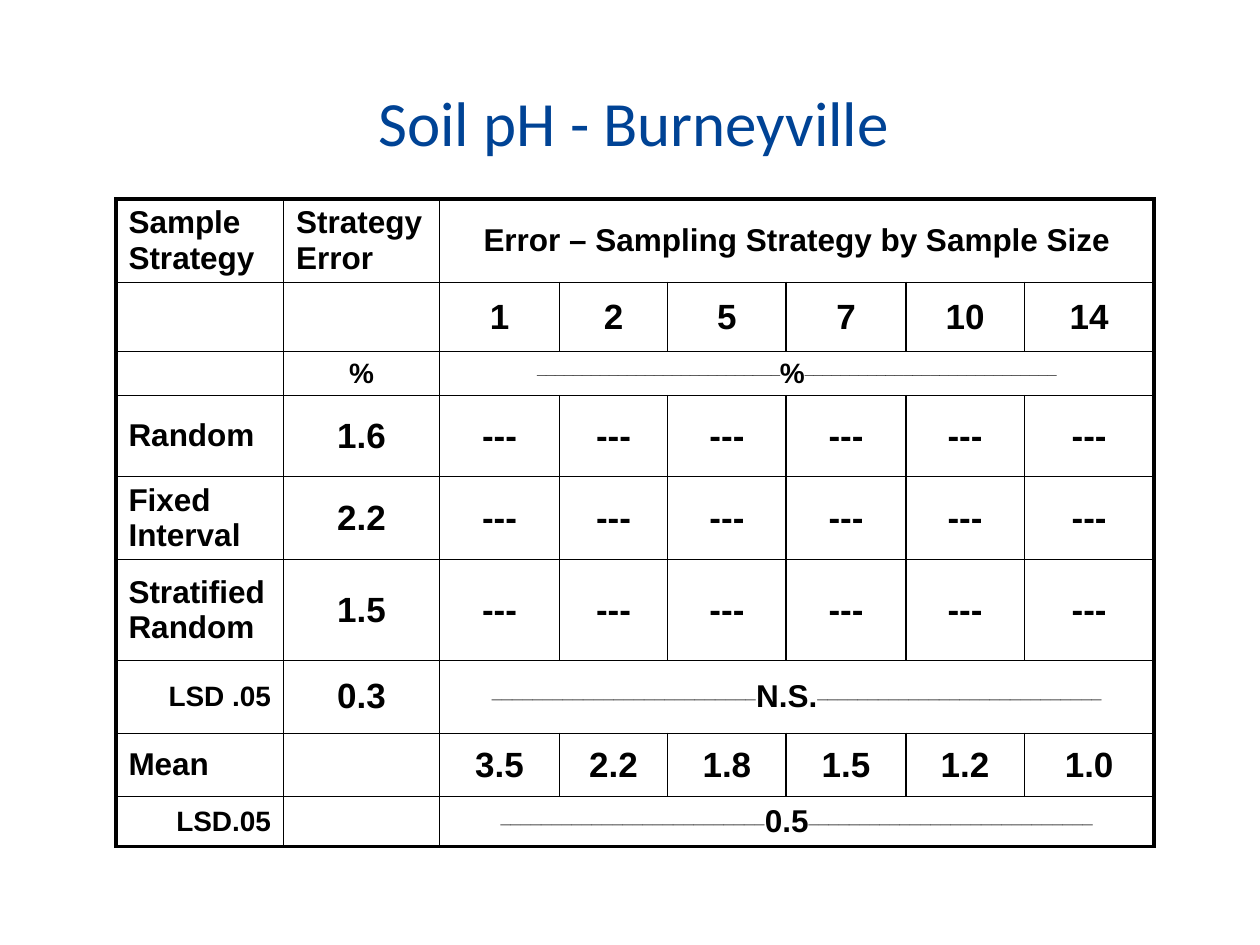
"""Build the soil pH slide with its sampling error table."""
import lxml.etree
import pptx
import pptx.dml.color
import pptx.enum.text
import pptx.oxml.ns
import pptx.util

Inches = pptx.util.Inches
Pt = pptx.util.Pt
ALIGN = pptx.enum.text.PP_ALIGN
ANCHOR = pptx.enum.text.MSO_ANCHOR
qn = pptx.oxml.ns.qn

TITLE = "Soil pH - Burneyville"
TITLE_BOX = (0.75, 0.42, 8.5, 1.08)
TABLE_ORIGIN = (0.92, 1.58)
COLUMN_WIDTHS = [1.33, 1.24, 0.95, 0.86, 0.94, 0.95, 0.94, 1.03]
FIRST_VALUE_COLUMN = 2

NO_VALUES = ["---"] * 6
ROWS = [
    {"height": 0.64, "kind": "header", "label": "Sample Strategy", "error": "Strategy Error",
     "span": (0, "Error – Sampling Strategy by Sample Size", 0)},
    {"height": 0.55, "kind": "data", "values": ["1", "2", "5", "7", "10", "14"]},
    {"height": 0.35, "kind": "unit", "error": "%", "span": (27, "%", 28)},
    {"height": 0.64, "kind": "data", "label": "Random", "error": "1.6", "values": NO_VALUES},
    {"height": 0.64, "kind": "data", "label": "Fixed Interval", "error": "2.2", "values": NO_VALUES},
    {"height": 0.8, "kind": "data", "label": "Stratified Random", "error": "1.5", "values": NO_VALUES},
    {"height": 0.58, "kind": "lsd", "label": "LSD .05", "error": "0.3", "span": (26, "N.S.", 28)},
    {"height": 0.5, "kind": "data", "label": "Mean",
     "values": ["3.5", "2.2", "1.8", "1.5", "1.2", "1.0"]},
    {"height": 0.4, "kind": "lsd", "label": "LSD.05", "span": (26, "0.5", 28)},
]

THEME = {
    "title": {"name": "Calibri", "size": Pt(36), "color": "004395"},
    "large": {"name": "Arial", "size": Pt(20), "bold": True, "color": "000000"},
    "medium": {"name": "Arial", "size": Pt(18), "bold": True, "color": "000000"},
    "small": {"name": "Arial", "size": Pt(16), "bold": True, "color": "000000"},
    "border": {"color": "000000", "inner": Pt(1), "outer": Pt(2.25)},
}
KINDS = {
    "header": {"label": ("medium", ALIGN.LEFT), "error": ("medium", ALIGN.LEFT), "span": "medium"},
    "unit": {"label": ("small", ALIGN.LEFT), "error": ("small", ALIGN.CENTER), "span": "small"},
    "data": {"label": ("medium", ALIGN.LEFT), "error": ("large", ALIGN.CENTER)},
    "lsd": {"label": ("small", ALIGN.RIGHT), "error": ("large", ALIGN.CENTER), "span": "medium"},
}
CELL_FORMATS = {
    ANCHOR.TOP: {"margin_top": Inches(0.05), "margin_bottom": Inches(0.01)},
    ANCHOR.MIDDLE: {"margin_top": Inches(0.03), "margin_bottom": Inches(0.03)},
}


def add_run(paragraph, text, style, raised=False):
    """Add one run in a theme style."""
    run = paragraph.add_run()
    run.text = text
    for name, value in THEME[style].items():
        if name == "color":
            run.font.color.rgb = pptx.dml.color.RGBColor.from_string(value)
        else:
            setattr(run.font, name, value)
    if raised:
        run.font._element.set("baseline", "30000")


def write_cell(cell, pieces, style, alignment, anchor=ANCHOR.MIDDLE):
    """Write (text, raised) pieces, or size the empty cell."""
    for name, value in {"vertical_anchor": anchor, **CELL_FORMATS[anchor]}.items():
        setattr(cell, name, value)
    paragraph = cell.text_frame.paragraphs[0]
    paragraph.alignment = alignment
    pieces = [piece for piece in pieces if piece[0]]
    for text, raised in pieces:
        add_run(paragraph, text, style, raised)
    if not pieces:
        size = str(int(THEME["small"]["size"].pt * 100))
        lxml.etree.SubElement(paragraph._p, qn("a:endParaRPr"), sz=size)


def draw_borders(cell, outer_edges, hidden_edges):
    """Draw cell edges, heavier on the table outline."""
    border = THEME["border"]
    properties = cell._tc.get_or_add_tcPr()
    for edge in "LRTB":
        if edge in hidden_edges:
            continue
        width = border["outer" if edge in outer_edges else "inner"]
        line = lxml.etree.SubElement(properties, qn(f"a:ln{edge}"), w=str(int(width)))
        fill = lxml.etree.SubElement(line, qn("a:solidFill"))
        lxml.etree.SubElement(fill, qn("a:srgbClr"), val=border["color"])
    cell.fill.background()


def add_title(slide):
    """Add the centred title."""
    shape = slide.shapes.add_textbox(*map(Inches, TITLE_BOX))
    frame = shape.text_frame
    for name, value in {"word_wrap": True, "vertical_anchor": ANCHOR.MIDDLE}.items():
        setattr(frame, name, value)
    paragraph = frame.paragraphs[0]
    paragraph.alignment = ALIGN.CENTER
    paragraph._p.get_or_add_pPr().set("marL", str(Inches(0.06)))
    add_run(paragraph, TITLE, "title")


def fill_row(table, row_index, row):
    """Write the texts and borders of one table row."""
    kind = KINDS[row["kind"]]
    anchor = ANCHOR.TOP if row["kind"] in ("header", "unit") else ANCHOR.MIDDLE
    for column, part in enumerate(("label", "error")):
        write_cell(table.cell(row_index, column), [(row.get(part, ""), False)], *kind[part], anchor)

    last = len(COLUMN_WIDTHS) - 1
    first_value = table.cell(row_index, FIRST_VALUE_COLUMN)
    if "span" in row:
        first_value.merge(table.cell(row_index, last))
        before, text, after = row["span"]
        pieces = [("_" * before, True), (text, False), ("_" * after, True)]
        span_anchor = ANCHOR.TOP if row["kind"] == "unit" else ANCHOR.MIDDLE
        write_cell(first_value, pieces, kind["span"], ALIGN.CENTER, span_anchor)
        for column in range(FIRST_VALUE_COLUMN + 1, last + 1):
            write_cell(table.cell(row_index, column), [], kind["span"], ALIGN.CENTER)
    for column, text in enumerate(row.get("values", []), FIRST_VALUE_COLUMN):
        write_cell(table.cell(row_index, column), [(text, False)], "large", ALIGN.CENTER)

    for column in range(last + 1):
        cell = table.cell(row_index, column)
        tests = {
            "L": column == 0,
            "R": column == last or cell.is_merge_origin,
            "T": row_index == 0,
            "B": row_index == len(ROWS) - 1,
        }
        outer_edges = [edge for edge, outer in tests.items() if outer]
        hidden_edges = ""
        if cell.is_spanned:
            hidden_edges = "L" if column == last else "LR"
        draw_borders(cell, outer_edges, hidden_edges)


def add_error_table(slide):
    """Add the error table."""
    heights = [row["height"] for row in ROWS]
    size = (sum(COLUMN_WIDTHS), sum(heights))
    frame = slide.shapes.add_table(
        len(ROWS), len(COLUMN_WIDTHS), *map(Inches, TABLE_ORIGIN + size)
    )
    table = frame.table
    for name in ("first_row", "horz_banding"):
        setattr(table, name, False)
    for column, width in zip(table.columns, COLUMN_WIDTHS):
        column.width = Inches(width)
    for table_row, height in zip(table.rows, heights):
        table_row.height = Inches(height)
    for row_index, row in enumerate(ROWS):
        fill_row(table, row_index, row)


def main():
    """Build and save the presentation."""
    presentation = pptx.Presentation()
    for name, value in {"slide_width": 10, "slide_height": 7.5}.items():
        setattr(presentation, name, Inches(value))
    slide = presentation.slides.add_slide(presentation.slide_layouts[6])
    add_title(slide)
    add_error_table(slide)
    presentation.save("out.pptx")


if __name__ == "__main__":
    main()
